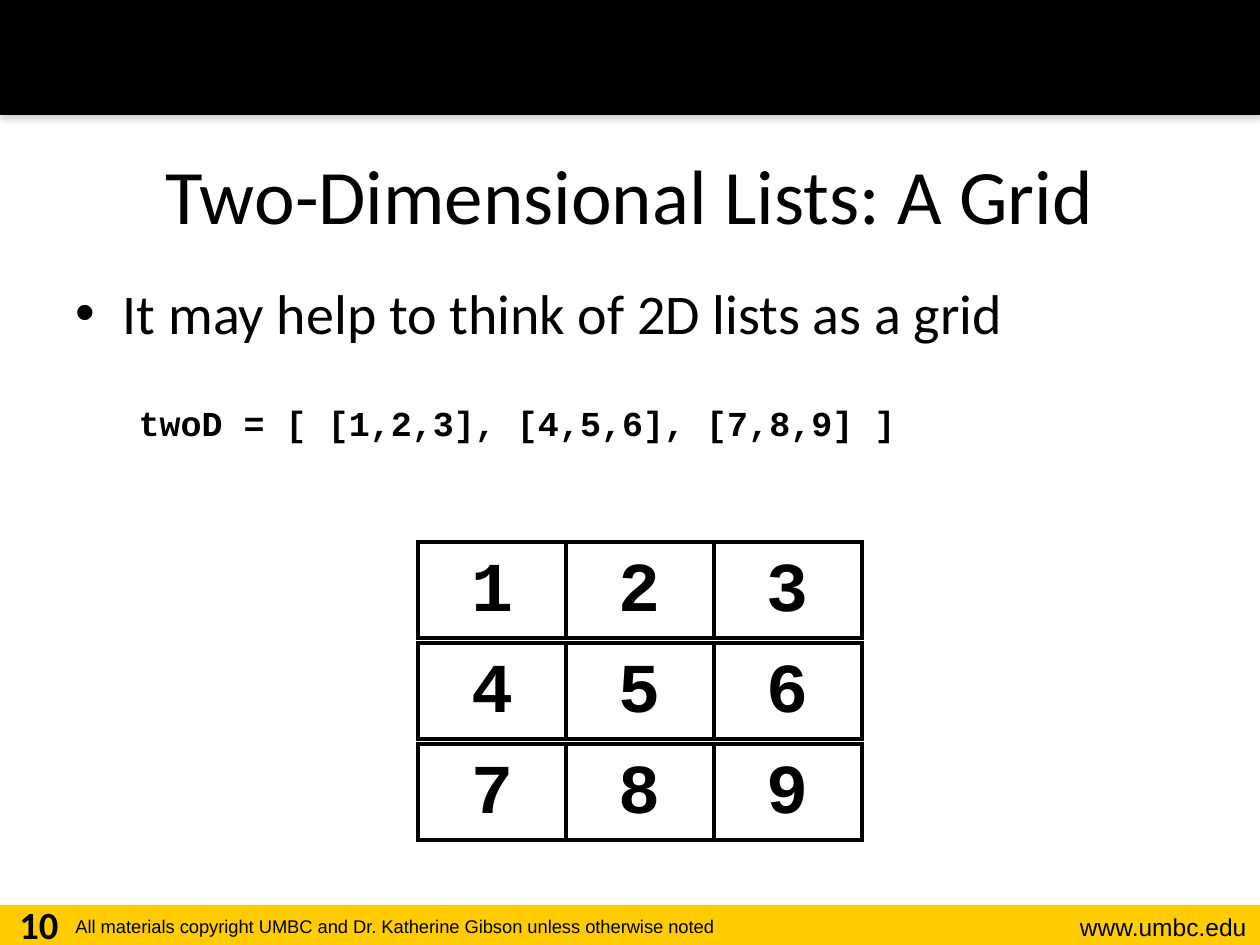
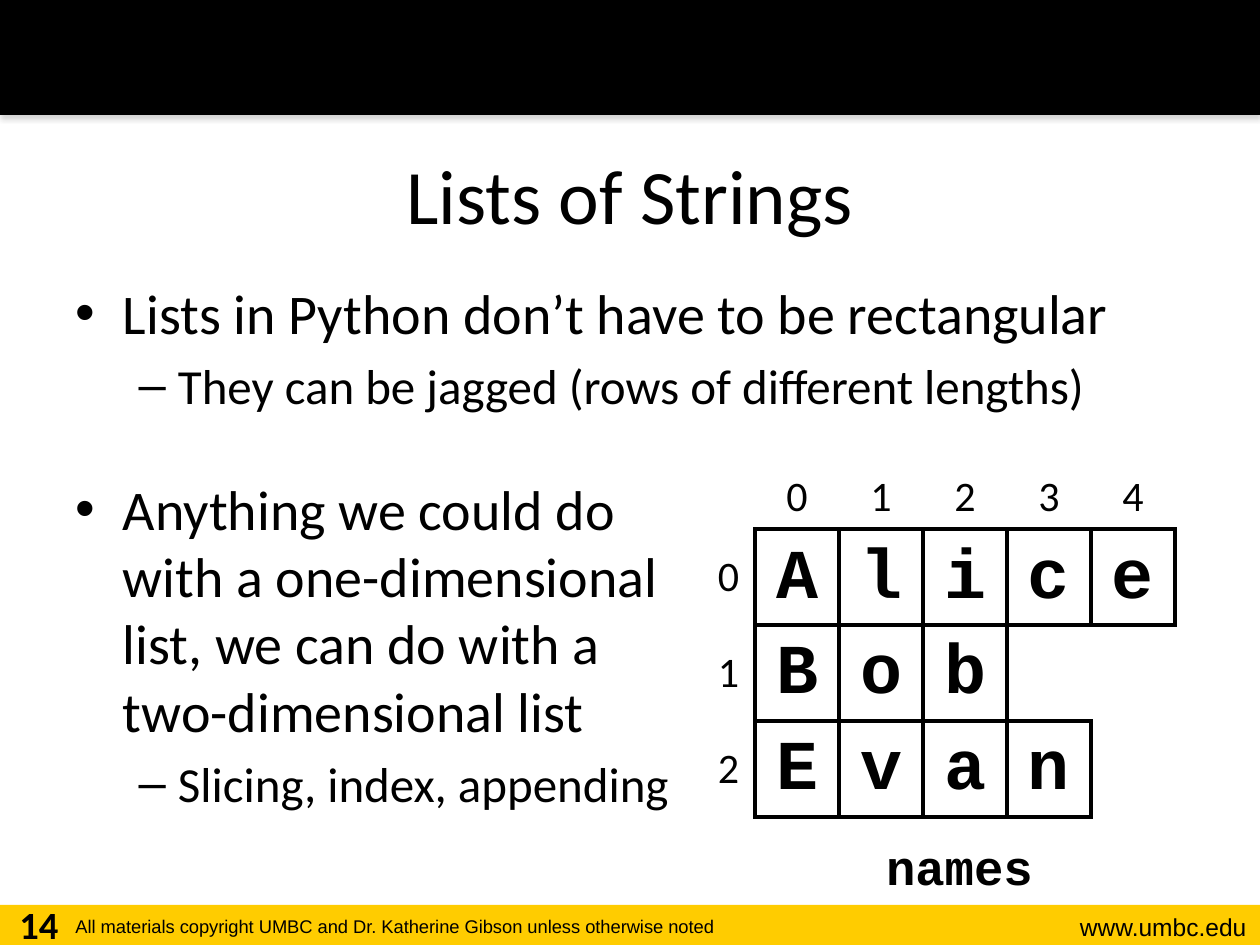
from lxml.etree import SubElement
from pptx import Presentation
from pptx.dml.color import RGBColor
from pptx.enum.shapes import MSO_SHAPE
from pptx.enum.text import MSO_ANCHOR, MSO_AUTO_SIZE, PP_ALIGN
from pptx.oxml import parse_xml
from pptx.oxml.ns import nsdecls, qn
from pptx.util import Emu, Pt

PX_PER_INCH = 126
BLACK, WHITE, GOLD, SHADOW = "000000", "FFFFFF", "FFCC00", "808080"
SANS, FOOTER_FONT, MONO = "Calibri", "Arial", "Courier New"
COPYRIGHT = "All materials copyright UMBC and Dr. Katherine Gibson unless otherwise noted"
SITE = "www.umbc.edu"
CELL_HEIGHT = 96


def px(length):
    """Turn whole pixels into EMU."""
    return Emu(round(length * 914400 / PX_PER_INCH))


def color(value):
    """Turn a hex string into a colour."""
    return RGBColor.from_string(value)


def format_paragraph(para, size, font=SANS, bold=False, align=PP_ALIGN.LEFT):
    """Align a paragraph and format its runs."""
    para.alignment = align
    for span in para.runs:
        span.font.size = Pt(size)
        span.font.name = font
        span.font.bold = bold
        span.font.color.rgb = color(BLACK)


def place(shape, left, top, width, height):
    """Move and size a shape."""
    shape.left, shape.top = px(left), px(top)
    shape.width, shape.height = px(width), px(height)


def add_label(slide, text, frame, size, font, bold=False, align=PP_ALIGN.LEFT):
    """Add a one-line text box."""
    box = slide.shapes.add_textbox(*map(px, frame))
    box.text_frame.word_wrap = True
    box.text_frame.text = text
    format_paragraph(box.text_frame.paragraphs[0], size, font, bold, align)


def add_band(slide, top, height, fill):
    """Add a full-width band."""
    band = slide.shapes.add_shape(MSO_SHAPE.RECTANGLE, 0, px(top), px(1260), px(height))
    band.shadow.inherit = False
    band.fill.solid()
    band.fill.fore_color.rgb = color(fill)
    band.line.fill.background()
    return band


def add_band_shadow(band):
    """Give a band a soft shadow below it."""
    effects = band._element.spPr.find(qn("a:effectLst"))
    effects.append(parse_xml(
        f'<a:outerShdw {nsdecls("a")} blurRad="{Pt(3.1)}" dist="{Pt(1.8)}" '
        f'dir="5400000" rotWithShape="0"><a:srgbClr val="{SHADOW}">'
        '<a:alpha val="35000"/></a:srgbClr></a:outerShdw>'))


def add_page(deck, title, number):
    """Add a slide with its bands, footer and title."""
    slide = deck.slides.add_slide(deck.slide_layouts[1])
    add_band(slide, 905, 40, GOLD)
    add_band_shadow(add_band(slide, 0, 115, BLACK))
    add_label(slide, SITE, (1008, 906, 251, 43), 14, FOOTER_FONT, align=PP_ALIGN.RIGHT)
    add_label(slide, COPYRIGHT, (63, 909, 827, 37), 10.5, FOOTER_FONT)
    add_label(slide, str(number), (0, 895, 78, 50), 22, SANS, True, PP_ALIGN.CENTER)
    heading = slide.shapes.title
    place(heading, 63, 115, 1134, 157)
    heading.text_frame.text = title
    heading.text_frame.vertical_anchor = MSO_ANCHOR.MIDDLE
    format_paragraph(heading.text_frame.paragraphs[0], 44, align=PP_ALIGN.CENTER)
    return slide


def fill_body(slide, items):
    """Fill the body with (text, level, space before) items."""
    body = slide.placeholders[1]
    place(body, 63, 272, 1134, 622)
    frame = body.text_frame
    frame.auto_size = MSO_AUTO_SIZE.NONE
    for index, (text, level, space) in enumerate(items):
        para = frame.add_paragraph() if index else frame.paragraphs[0]
        para.text = text
        para.level = level
        para.space_before = Pt(space)
        format_paragraph(para, 28 if level else 32)
    return frame


def format_code(para):
    """Turn a body paragraph into an unbulleted line of code."""
    properties = para._p.get_or_add_pPr()
    properties.set("marL", str(px(63)))
    properties.set("indent", "0")
    SubElement(properties, qn("a:buNone"))
    format_paragraph(para, 20, MONO, True)


def set_border(cell, side, visible):
    """Draw or hide the line along one side of a cell."""
    fill = (f'<a:solidFill><a:srgbClr val="{BLACK}"/></a:solidFill>' if visible
            else "<a:noFill/>")
    cell._tc.get_or_add_tcPr().append(parse_xml(
        f'<a:ln{side} {nsdecls("a")} w="{Pt(2.25)}">{fill}</a:ln{side}>'))


def add_grid(slide, rows, left, top, column_width, row_heights):
    """Add a table of characters, boxed outside the first column and a short first row."""
    columns = len(rows[-1])
    frame = slide.shapes.add_table(len(rows), columns, px(left), px(top),
                                   px(column_width * columns), px(sum(row_heights)))
    table = frame.table
    table.first_row = table.horz_banding = False
    for column in table.columns:
        column.width = px(column_width)
    boxed = {(r, c) for r, row in enumerate(rows) for c, character in enumerate(row)
             if c and row_heights[r] == CELL_HEIGHT and character != " "}
    for r, row in enumerate(rows):
        table.rows[r].height = px(row_heights[r])
        for c, character in enumerate(row):
            cell = table.cell(r, c)
            neighbours = {"L": (r, c - 1), "R": (r, c + 1), "T": (r - 1, c), "B": (r + 1, c)}
            for side, neighbour in neighbours.items():
                set_border(cell, side, boxed & {(r, c), neighbour})
            cell.fill.solid()
            cell.fill.fore_color.rgb = color(WHITE)
            cell.margin_left = cell.margin_right = px(16)
            cell.margin_top = cell.margin_bottom = px(6)
            cell.vertical_anchor = MSO_ANCHOR.BOTTOM if c else MSO_ANCHOR.MIDDLE
            cell.text_frame.text = character.strip()
            align = PP_ALIGN.CENTER if c else PP_ALIGN.RIGHT
            style = (40, MONO, True) if (r, c) in boxed else (24, SANS, False)
            format_paragraph(cell.text_frame.paragraphs[0], *style, align)


def add_number_grid(deck):
    """Build the slide that shows a 2D list as a grid."""
    slide = add_page(deck, "Two-Dimensional Lists: A Grid", 10)
    frame = fill_body(slide, [
        ("It may help to think of 2D lists as a grid", 0, 0),
        ("twoD = [ [1,2,3], [4,5,6], [7,8,9] ]", 1, 32),
    ])
    format_code(frame.paragraphs[1])
    left, top, width, spacer = 270, 542, 148, 67
    add_grid(slide, ["    ", " 123"], left, top - spacer, width, [spacer, CELL_HEIGHT])
    for index, row in enumerate((" 456", " 789"), start=1):
        add_grid(slide, [row], left, top + 101 * index, width, [CELL_HEIGHT])


def add_jagged_names(deck):
    """Build the slide that shows strings as a jagged list."""
    slide = add_page(deck, "Lists of Strings", 14)
    fill_body(slide, [
        ("Lists in Python don’t have to be rectangular", 0, 0),
        ("They can be jagged (rows of different lengths)", 1, 5.6),
        ("Anything we could do\vwith a one-dimensional\v"
         "list, we can do with a\vtwo-dimensional list", 0, 34.5),
        ("Slicing, index, appending", 1, 5.6),
    ])
    names = ["Alice", "Bob", "Evan"]
    rows = [" 01234 "] + [f"{index}{name:6}" for index, name in enumerate(names)]
    add_grid(slide, rows, 671, 461, 84, [68] + [CELL_HEIGHT] * len(names))
    add_label(slide, "names", (828, 830, 263, 72), 28, MONO, True, PP_ALIGN.CENTER)


def main():
    """Build and save the deck."""
    deck = Presentation()
    deck.slide_width, deck.slide_height = px(1260), px(945)
    add_number_grid(deck)
    add_jagged_names(deck)
    deck.save("out.pptx")


if __name__ == "__main__":
    main()
